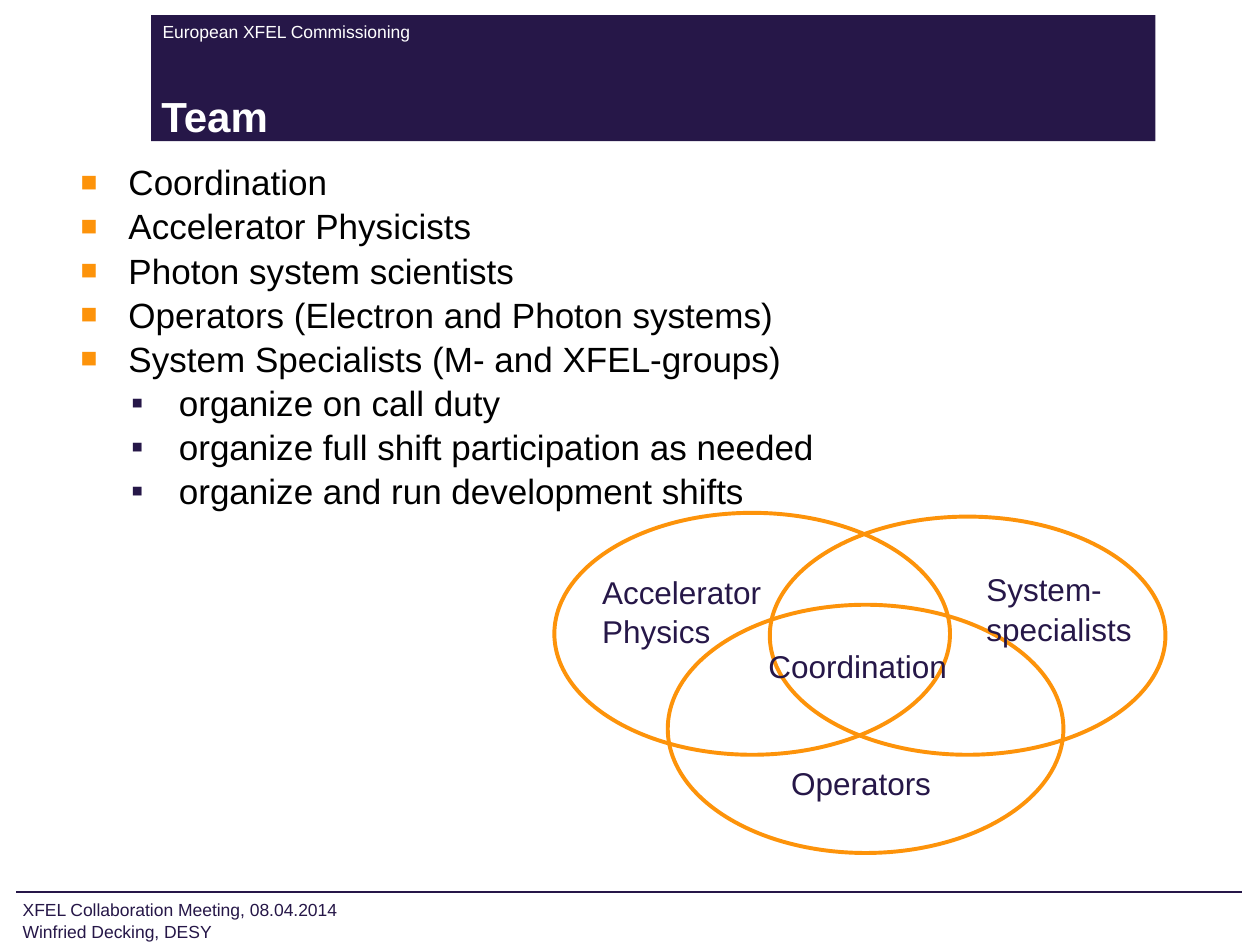
"""Build the XFEL commissioning team slide with its overlapping-circles diagram."""
from lxml.etree import SubElement
from pptx import Presentation
from pptx.dml.color import RGBColor
from pptx.enum.shapes import MSO_CONNECTOR as CONN, MSO_SHAPE as SHAPE
from pptx.enum.text import MSO_ANCHOR as ANCHOR, MSO_AUTO_SIZE as FIT, PP_ALIGN as ALIGN
from pptx.oxml.ns import qn
from pptx.util import Inches, Pt

NAVY = RGBColor(0x26, 0x17, 0x48)
ORANGE = RGBColor(0xFD, 0x93, 0x0A)
WHITE = RGBColor(0xFF, 0xFF, 0xFF)
BLACK = RGBColor(0, 0, 0)

TEAM = [
    (0, "Coordination"),
    (0, "Accelerator Physicists"),
    (0, "Photon system scientists"),
    (0, "Operators (Electron and Photon systems)"),
    (0, "System Specialists (M- and XFEL-groups)"),
    (1, "organize on call duty"),
    (1, "organize full shift participation as needed"),
    (1, "organize and run development shifts"),
]
BULLETS = [("■", ORANGE, 80, 0.46), ("▪", NAVY, 100, 0.86)]
CIRCLES = [(4.4, 4.07, 3.14, 1.92), (6.11, 4.1, 3.14, 1.89), (5.3, 4.8, 3.14, 1.97)]
LABELS = [
    ("Operators", (6.18, 6, 1.52, 0.48), False),
    ("Accelerator Physics", (4.68, 4.48, 2.23, 0.84), True),
    ("System- specialists", (7.73, 4.46, 1.74, 0.84), True),
    ("Coordination", (6, 5.07, 1.87, 0.48), False),
]


def write(p, text, size=18, color=NAVY, bold=False, spacing=1.05):
    p.alignment = ALIGN.LEFT
    p.line_spacing = spacing
    p.space_before = p.space_after = Pt(0)
    r = p.add_run()
    r.text = text
    r.font.name = "Arial"
    r.font.size = Pt(size)
    r.font.bold = bold
    r.font.color.rgb = color


def set_bullet(p, char, color, percent, left):
    pPr = p._p.get_or_add_pPr()
    pPr.set("marL", str(Inches(left)))
    pPr.set("indent", str(Inches(-0.38)))
    clr = SubElement(pPr, qn("a:buClr"))
    SubElement(clr, qn("a:srgbClr"), val=str(color))
    SubElement(pPr, qn("a:buSzPct"), val=str(percent * 1000))
    SubElement(pPr, qn("a:buFont"), typeface="Arial")
    SubElement(pPr, qn("a:buChar"), char=char)


class Deck:
    def __init__(self):
        self.prs = Presentation()
        self.prs.slide_width, self.prs.slide_height = Inches(10), Inches(7.5)
        self.s = self.prs.slides.add_slide(self.prs.slide_layouts[1])
        self.shapes = self.s.shapes

    def frame(self, sp, insets, anchor=ANCHOR.TOP, wrap=True, fit=FIT.NONE):
        tf = sp.text_frame
        tf.margin_left, tf.margin_top, tf.margin_right, tf.margin_bottom = map(Inches, insets)
        tf.vertical_anchor = anchor
        tf.word_wrap = wrap
        tf.auto_size = fit
        return tf

    def rule(self, x1, x2, y):
        ln = self.shapes.add_connector(CONN.STRAIGHT, *map(Inches, (x1, y, x2, y)))
        ln.line.color.rgb = NAVY
        ln.line.width = Pt(1)
        SubElement(ln._element.spPr, qn("a:effectLst"))

    def shape(self, kind, box, fill=None, line=None):
        sp = self.shapes.add_shape(kind, *map(Inches, box))
        sp.shadow.inherit = False
        if fill is None:
            sp.fill.background()
        else:
            sp.fill.solid()
            sp.fill.fore_color.rgb = fill
        if line is None:
            sp.line.fill.background()
        else:
            sp.line.color.rgb = line
            sp.line.width = Pt(2.25)

    def text(self, lines, box, insets=(0.1, 0.05, 0.1, 0.05), anchor=ANCHOR.TOP,
             wrap=True, fit=FIT.NONE, **style):
        sp = self.shapes.add_textbox(*map(Inches, box))
        tf = self.frame(sp, insets, anchor, wrap, fit)
        for i, line in enumerate(lines):
            write(tf.add_paragraph() if i else tf.paragraphs[0], line, **style)

    def placeholder(self, idx, box, insets, anchor=ANCHOR.TOP):
        sp = self.s.placeholders[idx]
        sp.left, sp.top, sp.width, sp.height = map(Inches, box)
        self.s.shapes.element.append(sp.element)
        return self.frame(sp, insets, anchor)

    def title(self, text, box):
        tf = self.placeholder(0, box, (0.08, 0.05, 0.1, 0), ANCHOR.BOTTOM)
        write(tf.paragraphs[0], text, size=24, color=WHITE, bold=True, spacing=1)

    def bullets(self, items, box):
        tf = self.placeholder(1, box, (0.3, 0, 0.1, 0.05))
        for i, (level, text) in enumerate(items):
            p = tf.add_paragraph() if i else tf.paragraphs[0]
            p.level = level
            write(p, text, size=20, color=BLACK)
            set_bullet(p, *BULLETS[level])

    def diagram(self, circles, labels):
        self.shapes = self.s.shapes.add_group_shape().shapes
        for box in circles:
            self.shape(SHAPE.OVAL, box, line=ORANGE)
        for text, box, wrap in labels:
            self.text([text], box, wrap=wrap, fit=FIT.SHAPE_TO_FIT_TEXT)
        self.shapes = self.s.shapes


def main():
    deck = Deck()
    small = dict(insets=(0.09, 0, 0.05, 0), anchor=ANCHOR.BOTTOM, size=10)
    deck.rule(0.13, 9.86, 7.08)
    deck.shape(SHAPE.RECTANGLE, (1.2, 0.12, 7.97, 1), fill=NAVY)
    deck.text(["European XFEL Commissioning"], (1.2, 0.12, 7.25, 0.21),
              color=WHITE, spacing=1.1, **small)
    deck.text(["XFEL Collaboration Meeting, 08.04.2014", "Winfried Decking, DESY"],
              (0.09, 6.98, 2.8, 0.5), **small)
    deck.title("Team", (1.2, 0.59, 7.97, 0.53))
    deck.bullets(TEAM, (0.26, 1.26, 9.47, 2.81))
    deck.diagram(CIRCLES, LABELS)
    deck.prs.save("out.pptx")


if __name__ == "__main__":
    main()
